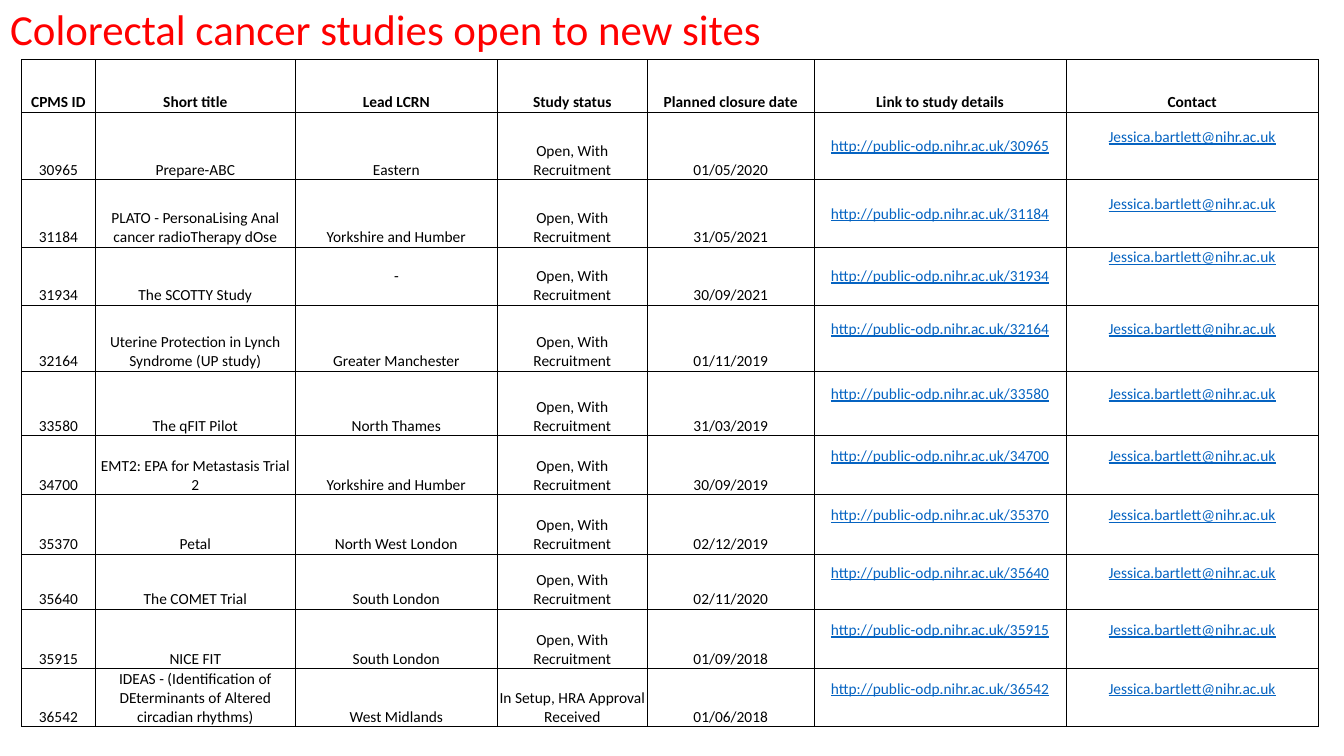
from lxml import etree
from pptx import Presentation
from pptx.dml.color import RGBColor
from pptx.enum.text import MSO_ANCHOR, MSO_AUTO_SIZE, PP_ALIGN
from pptx.oxml.ns import qn
from pptx.util import Pt

TITLE = "Colorectal cancer studies open to new sites"
HEADS = ("CPMS ID", "Short title", "Lead LCRN", "Study status",
         "Planned closure date", "Link to study details", "Contact")
OPEN = "Open, With Recruitment"
SETUP = "In Setup, HRA Approval Received"
SITE = "http://public-odp.nihr.ac.uk/"
MAIL = "Jessica.bartlett@nihr.ac.uk"
STUDIES = [
    ("30965", "Prepare-ABC", "Eastern", OPEN, "01/05/2020"),
    ("31184", "PLATO - PersonaLising Anal cancer radioTherapy dOse",
     "Yorkshire and Humber", OPEN, "31/05/2021"),
    ("31934", "The SCOTTY Study", "-", OPEN, "30/09/2021"),
    ("32164", "Uterine Protection in Lynch Syndrome (UP study)",
     "Greater Manchester", OPEN, "01/11/2019"),
    ("33580", "The qFIT Pilot", "North Thames", OPEN, "31/03/2019"),
    ("34700", "EMT2: EPA for Metastasis Trial 2",
     "Yorkshire and Humber", OPEN, "30/09/2019"),
    ("35370", "Petal", "North West London", OPEN, "02/12/2019"),
    ("35640", "The COMET Trial", "South London", OPEN, "02/11/2020"),
    ("35915", "NICE FIT", "South London", OPEN, "01/09/2018"),
    ("36542", "IDEAS - (Identification of DEterminants of Altered circadian rhythms)",
     "West Midlands", SETUP, "01/06/2018"),
]
WIDTHS = (52.8, 142.9, 144.3, 107.1, 119.2, 180, 180)
HEIGHTS = (37.7, 48.2, 48.2, 41.3, 47.4, 45.8, 42.5, 42.4, 39.4, 42.5, 41.4)
LINE = 13.4
LINK_COL, MAIL_COL = 5, 6

BLACK = RGBColor(0, 0, 0)
WHITE = RGBColor(255, 255, 255)
RED = RGBColor(255, 0, 0)
BLUE = RGBColor(0x05, 0x63, 0xC1)
FONT = "Calibri"
LEFT, CENTER = PP_ALIGN.LEFT, PP_ALIGN.CENTER
MIDDLE, BOTTOM = MSO_ANCHOR.MIDDLE, MSO_ANCHOR.BOTTOM
NO_FIT = MSO_AUTO_SIZE.NONE


def style(para, size, color, align):
    para.alignment = align
    font = para.runs[0].font
    font.name, font.size = FONT, Pt(size)
    font.color.rgb = color
    return font


def border(cell):
    props = cell._tc.get_or_add_tcPr()
    for side in ("a:lnL", "a:lnR", "a:lnT", "a:lnB"):
        line = etree.SubElement(props, qn(side), w=str(Pt(0.5)))
        fill = etree.SubElement(line, qn("a:solidFill"))
        etree.SubElement(fill, qn("a:srgbClr"), val=str(BLACK))


def lift(row, col):
    if col == MAIL_COL:
        return 2 * LINE if row == 3 else LINE
    return LINE if row > 3 else 0


def fill_cell(cell, text, row, col):
    link = row > 0 and col >= LINK_COL
    cell.text_frame.text = text
    font = style(cell.text_frame.paragraphs[0], 11, BLUE if link else BLACK, CENTER)
    font.bold = row == 0
    font.underline = link
    cell.vertical_anchor = MIDDLE if link or text == "-" else BOTTOM
    cell.margin_left = cell.margin_right = cell.margin_top = Pt(0.7)
    cell.margin_bottom = Pt(lift(row, col) if link else 0)
    border(cell)
    cell.fill.solid()
    cell.fill.fore_color.rgb = WHITE


def main():
    deck = Presentation()
    deck.slide_width, deck.slide_height = Pt(960), Pt(540)
    slide = deck.slides.add_slide(deck.slide_layouts[5])

    title = slide.shapes.title
    title.left, title.top, title.width, title.height = Pt(0), Pt(6.5), Pt(594), Pt(36.7)
    frame = title.text_frame
    frame.text = TITLE
    frame.word_wrap = True
    frame.auto_size = NO_FIT
    frame.vertical_anchor = MIDDLE
    frame.paragraphs[0].line_spacing = 0.7
    style(frame.paragraphs[0], 30.6, RED, LEFT)

    rows = [HEADS] + [s + (SITE + s[0], MAIL) for s in STUDIES]
    table = slide.shapes.add_table(len(rows), len(HEADS), Pt(15.3), Pt(42.4),
                                   Pt(sum(WIDTHS)), Pt(sum(HEIGHTS))).table
    table.first_row = table.horz_banding = False
    for column, width in zip(table.columns, WIDTHS):
        column.width = Pt(width)
    for r, (texts, height) in enumerate(zip(rows, HEIGHTS)):
        table.rows[r].height = Pt(height)
        for c, text in enumerate(texts):
            fill_cell(table.cell(r, c), text, r, c)

    deck.save("out.pptx")


if __name__ == "__main__":
    main()
